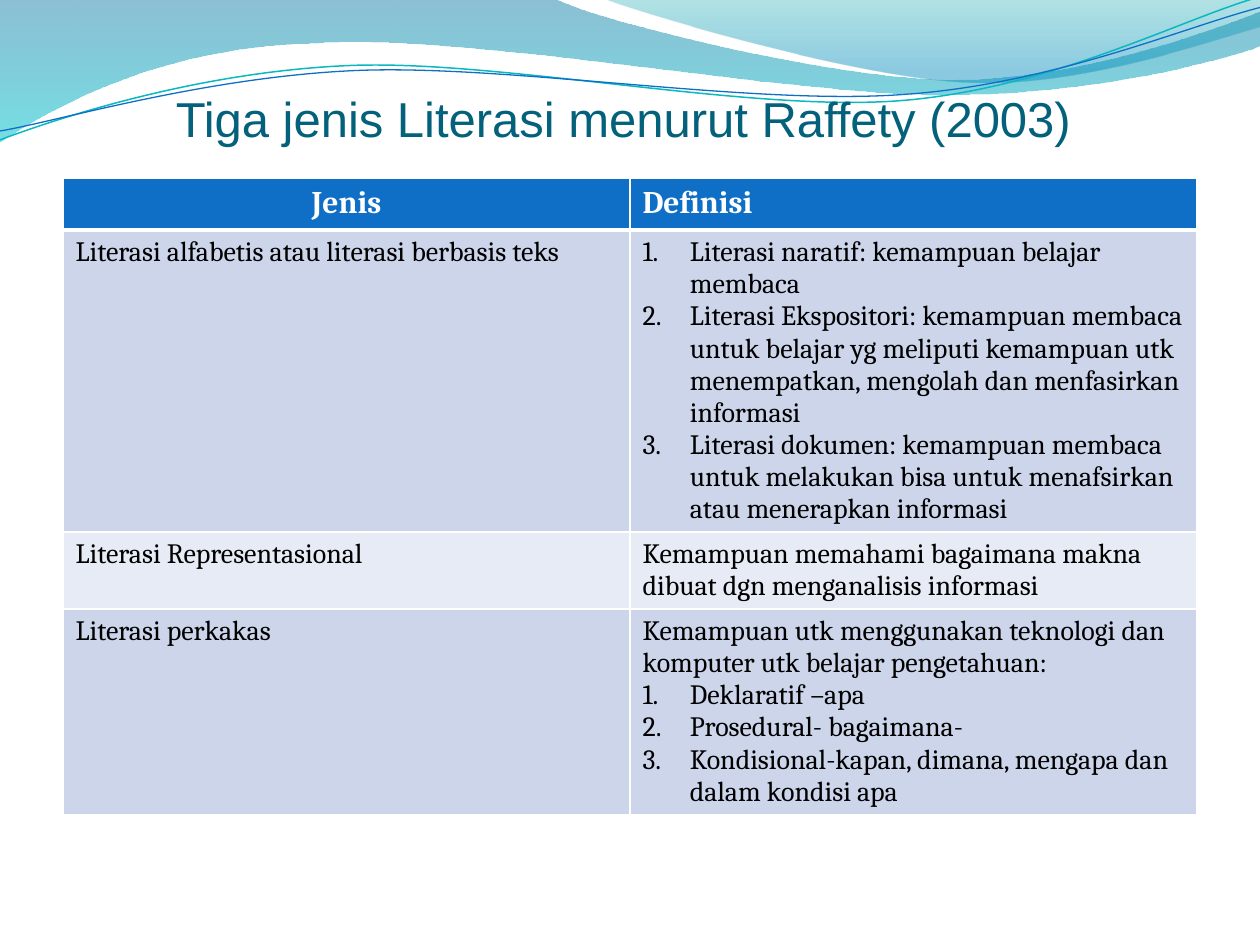
from dataclasses import dataclass
from math import cos, radians, sin

from lxml import etree
from pptx import Presentation
from pptx.dml.color import RGBColor
from pptx.enum.text import MSO_ANCHOR, PP_ALIGN
from pptx.oxml.ns import qn
from pptx.util import Inches, Pt

CENTER = PP_ALIGN.CENTER
LEFT = PP_ALIGN.LEFT
BOTTOM = MSO_ANCHOR.BOTTOM
WHITE = RGBColor(0xFF, 0xFF, 0xFF)
BLACK = RGBColor(0, 0, 0)
BLUE = RGBColor(0x0F, 0x6F, 0xC6)
TEAL = RGBColor(0x0A, 0xB8, 0xBF)
TITLE_COLOR = RGBColor(0x04, 0x61, 0x7B)
BAND_DARK = RGBColor(0xCC, 0xD5, 0xEA)
BAND_LIGHT = RGBColor(0xE7, 0xEB, 0xF5)
LINE_TILT = 2.7

Point = tuple[float, float]


@dataclass
class Stop:
    position: float
    color: RGBColor
    opacity: int


@dataclass
class Ribbon:
    start: Point
    segments: list[tuple[float, ...]]
    stops: tuple[Stop, Stop]


@dataclass
class WaveLine:
    start: Point
    segments: list[tuple[float, ...]]
    center: Point
    color: RGBColor
    width: float


@dataclass
class Item:
    text: str
    numbered: bool = False


RIBBONS = [
    Ribbon((0, 0), [
        (4.4, -0.01),
        (4.76, 0.17, 6.64, 0.63, 7.58, 0.63),
        (8.53, 0.63, 9.58, 0.26, 10, 0.09),
        (10.01, 0.36),
        (9.83, 0.44, 8.7, 0.76, 7.46, 0.75),
        (6.22, 0.75, 3.82, 0.28, 2.57, 0.34),
        (1.29, 0.36, 0.46, 0.83, -0.01, 1.13),
        (0, 0),
    ], (Stop(0, RGBColor(0, 0x74, 0xA1), 45), Stop(1, RGBColor(0, 0xC6, 0xCF), 55))),
    Ribbon((4.79, -0.01), [
        (5.09, 0.11, 6.82, 0.62, 7.69, 0.65),
        (8.56, 0.69, 9.61, 0.32, 10, 0.21),
        (10, 0),
        (4.79, -0.01),
    ], (Stop(0, RGBColor(0, 0xA1, 0xA9), 30), Stop(0.8, RGBColor(0, 0x8B, 0xBF), 45))),
]
WAVE_LINES = [
    WaveLine((0, 1.11), [
        (0.48, 0.93, 1.58, 0.57, 2.77, 0.52),
        (3.95, 0.47, 5.93, 0.89, 7.13, 0.8),
        (8.33, 0.71, 9.38, 0.15, 9.98, -0.02),
    ], (4.99, 0.58), TEAL, 0.85),
    WaveLine((0, 1.04), [
        (0.47, 0.96, 1.64, 0.61, 2.83, 0.56),
        (4.03, 0.51, 5.97, 0.84, 7.17, 0.75),
        (8.36, 0.67, 9.41, 0.21, 10, 0.06),
    ], (5, 0.59), BLUE, 0.75),
]

HEADERS = ["Jenis", "Definisi"]
ROWS = [
    ("Literasi alfabetis atau literasi berbasis teks", [
        Item("Literasi naratif: kemampuan belajar membaca", True),
        Item("Literasi Ekspositori: kemampuan membaca untuk belajar yg meliputi "
             "kemampuan utk menempatkan, mengolah dan menfasirkan informasi", True),
        Item("Literasi dokumen: kemampuan membaca untuk melakukan bisa untuk "
             "menafsirkan atau menerapkan informasi", True),
    ]),
    ("Literasi Representasional", [
        Item("Kemampuan memahami bagaimana makna dibuat dgn menganalisis informasi"),
    ]),
    ("Literasi perkakas", [
        Item("Kemampuan utk menggunakan teknologi dan komputer utk belajar pengetahuan:"),
        Item("Deklaratif –apa", True),
        Item("Prosedural- bagaimana-", True),
        Item("Kondisional-kapan, dimana, mengapa dan dalam kondisi apa", True),
    ]),
]


def rotate(point: Point, center: Point, degrees: float) -> Point:
    angle = radians(degrees)
    x, y = point[0] - center[0], point[1] - center[1]
    return (center[0] + x * cos(angle) - y * sin(angle),
            center[1] + x * sin(angle) + y * cos(angle))


def draw_curve(page, curve: Ribbon | WaveLine, center: Point = (0, 0),
               tilt: float = 0, close: bool = False):
    points = [curve.start]
    for segment in curve.segments:
        points.extend(zip(segment[::2], segment[1::2]))
    vertices = [(Inches(x), Inches(y))
                for x, y in (rotate(point, center, tilt) for point in points)]
    builder = page.shapes.build_freeform(*vertices[0])
    builder.add_line_segments(vertices[1:], close=close)
    shape = builder.convert_to_shape()
    shape.rotation = -tilt
    shape.shadow.inherit = False
    lines = iter(list(shape._element.iter(qn("a:lnTo"))))
    for segment in curve.segments:
        line = next(lines)
        if len(segment) == 6:
            bezier = etree.Element(qn("a:cubicBezTo"))
            line.addprevious(bezier)
            for part in (line, next(lines), next(lines)):
                bezier.append(part[0])
                part.getparent().remove(part)
    return shape


def draw_ribbon(page, ribbon: Ribbon) -> None:
    shape = draw_curve(page, ribbon, close=True)
    shape.line.fill.background()
    shape.fill.gradient()
    shape.fill.gradient_angle = 270
    for gradient_stop, stop in zip(shape.fill.gradient_stops, ribbon.stops):
        gradient_stop.color.rgb = stop.color
        gradient_stop.position = stop.position
    for color, stop in zip(shape._element.iter(qn("a:srgbClr")), ribbon.stops):
        etree.SubElement(color, qn("a:alpha"), val=str(stop.opacity * 1000))


def draw_wave_line(page, wave: WaveLine) -> None:
    shape = draw_curve(page, wave, wave.center, LINE_TILT)
    shape.fill.background()
    shape.line.color.rgb = wave.color
    shape.line.width = Pt(wave.width)


def format_runs(paragraph, font: str, size: float, color: RGBColor, bold: bool = False) -> None:
    for span in paragraph.runs:
        span.font.name = font
        span.font.size = Pt(size)
        span.font.color.rgb = color
        span.font.bold = bold


def number_paragraph(paragraph) -> None:
    properties = paragraph._p.get_or_add_pPr()
    properties.set("marL", str(Inches(3 / 8)))
    properties.set("indent", str(-Inches(3 / 8)))
    etree.SubElement(properties, qn("a:buFont"), typeface="+mj-lt")
    etree.SubElement(properties, qn("a:buAutoNum"), type="arabicPeriod")


def set_borders(cell, bottom_width: float) -> None:
    properties = cell._tc.get_or_add_tcPr()
    widths = {"a:lnL": 1, "a:lnR": 1, "a:lnT": 1, "a:lnB": bottom_width}
    for index, (tag, width) in enumerate(widths.items()):
        border = etree.Element(qn(tag), w=str(Pt(width)))
        fill = etree.SubElement(border, qn("a:solidFill"))
        etree.SubElement(fill, qn("a:srgbClr"), val=str(WHITE))
        properties.insert(index, border)


def fill_cell(cell, items: list[Item], fill: RGBColor, header: bool = False,
              alignment: PP_ALIGN = LEFT) -> None:
    cell.fill.solid()
    cell.fill.fore_color.rgb = fill
    set_borders(cell, 3 if header else 1)
    cell.text_frame.text = "\n".join(item.text for item in items)
    for paragraph, item in zip(cell.text_frame.paragraphs, items):
        paragraph.alignment = alignment
        if item.numbered:
            number_paragraph(paragraph)
        format_runs(paragraph, "Cambria", 18 if header else 16,
                    WHITE if header else BLACK, header)


def draw_table(page) -> None:
    row_height = Inches(0.41)
    row_count = len(ROWS) + 1
    frame = page.shapes.add_table(row_count, len(HEADERS), Inches(0.5), Inches(17 / 12),
                                  Inches(9), row_height * row_count)
    frame.height = Inches(5.24)
    table = frame.table
    for column, (header, alignment) in enumerate(zip(HEADERS, (CENTER, LEFT))):
        fill_cell(table.cell(0, column), [Item(header)], BLUE, True, alignment)
    for row, (kind, definition) in enumerate(ROWS, 1):
        band = BAND_DARK if row % 2 else BAND_LIGHT
        fill_cell(table.cell(row, 0), [Item(kind)], band)
        fill_cell(table.cell(row, 1), definition, band)


def draw_title(page) -> None:
    title = page.shapes.title
    title.left, title.top = Inches(0.5), Inches(0.25)
    title.width, title.height = Inches(9), Inches(0.92)
    page.shapes._spTree.append(title._element)
    frame = title.text_frame
    frame.text = "Tiga jenis Literasi menurut Raffety (2003) "
    frame.vertical_anchor = BOTTOM
    frame.margin_left = frame.margin_right = frame.margin_bottom = 0
    frame.margin_top = Inches(0.05)
    frame.paragraphs[0].alignment = CENTER
    format_runs(frame.paragraphs[0], "Arial", 28, TITLE_COLOR)


def main() -> None:
    deck = Presentation()
    deck.slide_width, deck.slide_height = Inches(10), Inches(7.5)
    page = deck.slides.add_slide(deck.slide_layouts[5])
    for ribbon in RIBBONS:
        draw_ribbon(page, ribbon)
    for wave in WAVE_LINES:
        draw_wave_line(page, wave)
    draw_title(page)
    draw_table(page)
    deck.save("out.pptx")


if __name__ == "__main__":
    main()
